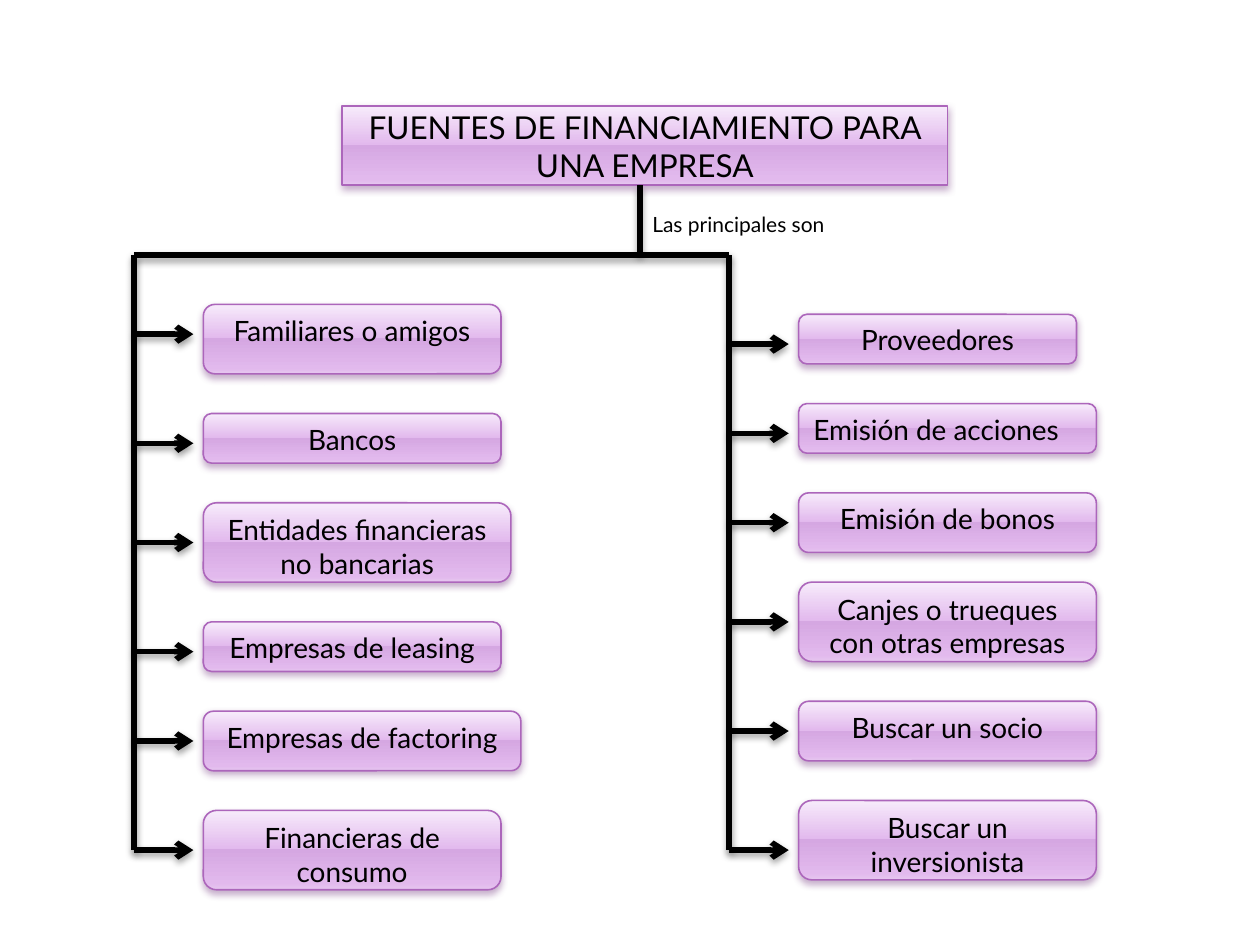
from dataclasses import dataclass

from lxml import etree
from pptx import Presentation
from pptx.dml.color import RGBColor
from pptx.enum import shapes, text
from pptx.oxml.ns import qn
from pptx.util import Pt


@dataclass(frozen=True)
class Theme:
    font: str = "Lato"
    ink: str = "000000"
    edge: str = "AC66BB"
    glow: str = "6E307B"
    stops: tuple = ((0, "F7EBFB"), (49, "E2B9ED"), (49, "D5A7E2"),
                    (92, "E2B9ED"), (100, "E6C6EF"))
    head: int = 18
    body: int = 16
    note: int = 12
    thin: float = 0.9
    thick: float = 3.15


THEME = Theme()
UNIT = 5.67  # grid step in points
LEFT, TOP = 76.5, 145.6  # left end of the bus line

# text, top, width, height and arrow height, in grid steps from the bus line
LENDERS = (
    ("Familiares o amigos", 5, 30, 7, 8),
    ("Bancos", 16, 30, 5, 19),
    ("Entidades financieras no bancarias", 25, 31, 8, 29),
    ("Empresas de leasing", 37, 30, 5, 40),
    ("Empresas de factoring", 46, 32, 6, 49),
    ("Financieras de consumo", 56, 30, 8, 60),
)
OTHERS = (
    ("Proveedores", 6, 28, 5, 9),
    ("Emisión de acciones", 15, 30, 5, 18),
    ("Emisión de bonos", 24, 30, 6, 27),
    ("Canjes o trueques con otras empresas", 33, 30, 8, 37),
    ("Buscar un socio", 45, 30, 6, 48),
    ("Buscar un inversionista", 55, 30, 8, 60),
)
FLUSH = {"Emisión de acciones"}


def color(parent, tag, value):
    node = etree.SubElement(parent, qn(tag))
    node.set("val", value)
    return node


def shade(shape, tone):
    effects = etree.SubElement(shape._element.spPr, qn("a:effectLst"))
    outer = etree.SubElement(effects, qn("a:outerShdw"))
    for name, value in (("blurRad", Pt(4)), ("dist", Pt(2)),
                        ("dir", 5400000), ("rotWithShape", 0)):
        outer.set(name, str(value))
    color(color(outer, "a:srgbClr", tone), "a:alpha", "38000")


def glaze(shape):
    """Give a shape the glossy fill, the thin edge and the soft shadow."""
    shape.fill.gradient()
    shape.fill.gradient_angle = 270
    stops = shape._element.spPr.find(qn("a:gradFill")).find(qn("a:gsLst"))
    for old in list(stops):
        stops.remove(old)
    for place, tone in THEME.stops:
        stop = etree.SubElement(stops, qn("a:gs"))
        stop.set("pos", str(place * 1000))
        color(stop, "a:srgbClr", tone)
    shape.line.color.rgb = RGBColor.from_string(THEME.edge)
    shape.line.width = Pt(THEME.thin)
    shade(shape, THEME.glow)


def write(shape, words, size, align, anchor):
    frame = shape.text_frame
    frame.text = words
    frame.word_wrap = True
    frame.vertical_anchor = anchor
    para = frame.paragraphs[0]
    para.alignment = align
    para.font.name = THEME.font
    para.font.size = Pt(size)
    para.font.color.rgb = RGBColor.from_string(THEME.ink)


def draw(slide, x1, y1, x2, y2, arrow=False):
    line = slide.shapes.add_connector(
        shapes.MSO_CONNECTOR.STRAIGHT, Pt(x1), Pt(y1), Pt(x2), Pt(y2))
    line.line.color.rgb = RGBColor.from_string(THEME.ink)
    line.line.width = Pt(THEME.thick)
    if arrow:
        tail = etree.SubElement(line._element.spPr.find(qn("a:ln")),
                                qn("a:tailEnd"))
        tail.set("type", "arrow")
    shade(line, THEME.ink)


def title(slide, x, y, w, h):
    shape = slide.shapes.title
    shape.left, shape.top, shape.width, shape.height = map(Pt, (x, y, w, h))
    form = etree.Element(qn("a:prstGeom"))
    form.set("prst", "roundRect")
    etree.SubElement(form, qn("a:avLst"))
    shape._element.spPr.insert(1, form)
    glaze(shape)
    write(shape, "FUENTES DE FINANCIAMIENTO PARA UNA EMPRESA", THEME.head,
          text.PP_ALIGN.CENTER, text.MSO_ANCHOR.MIDDLE)
    shape.text_frame.auto_size = text.MSO_AUTO_SIZE.NONE


def trunk(slide, x, y, w):
    """Draw the bus line, its stem up to the title and the stem's label."""
    stem = x + 51 * UNIT
    draw(slide, stem, y, stem, y - 7 * UNIT)
    draw(slide, x, y, x + w, y)
    label = slide.shapes.add_textbox(
        Pt(stem), Pt(y - 5 * UNIT), Pt(116.6), Pt(21.8))
    write(label, "Las principales son", THEME.note,
          text.PP_ALIGN.LEFT, text.MSO_ANCHOR.TOP)


def branch(slide, x, y, h, rows):
    for words, top, width, height, _ in rows:
        box = slide.shapes.add_shape(
            shapes.MSO_SHAPE.ROUNDED_RECTANGLE, Pt(x + 7 * UNIT),
            Pt(y + top * UNIT), Pt(width * UNIT), Pt(height * UNIT))
        glaze(box)
        align = (text.PP_ALIGN.LEFT if words in FLUSH
                 else text.PP_ALIGN.CENTER)
        write(box, words, THEME.body, align, text.MSO_ANCHOR.TOP)
    draw(slide, x, y + h, x, y)
    for row in rows:
        level = y + row[-1] * UNIT
        draw(slide, x, level, x + 6 * UNIT, level, arrow=True)


def main():
    deck = Presentation()
    deck.slide_width, deck.slide_height = Pt(720), Pt(540)
    slide = deck.slides.add_slide(deck.slide_layouts[5])
    span = 60 * UNIT
    title(slide, LEFT + 21 * UNIT, TOP - 15 * UNIT, 61 * UNIT, 8 * UNIT)
    trunk(slide, LEFT, TOP, span)
    branch(slide, LEFT, TOP, span, LENDERS)
    branch(slide, LEFT + span, TOP, span, OTHERS)
    deck.save("out.pptx")


if __name__ == "__main__":
    main()
